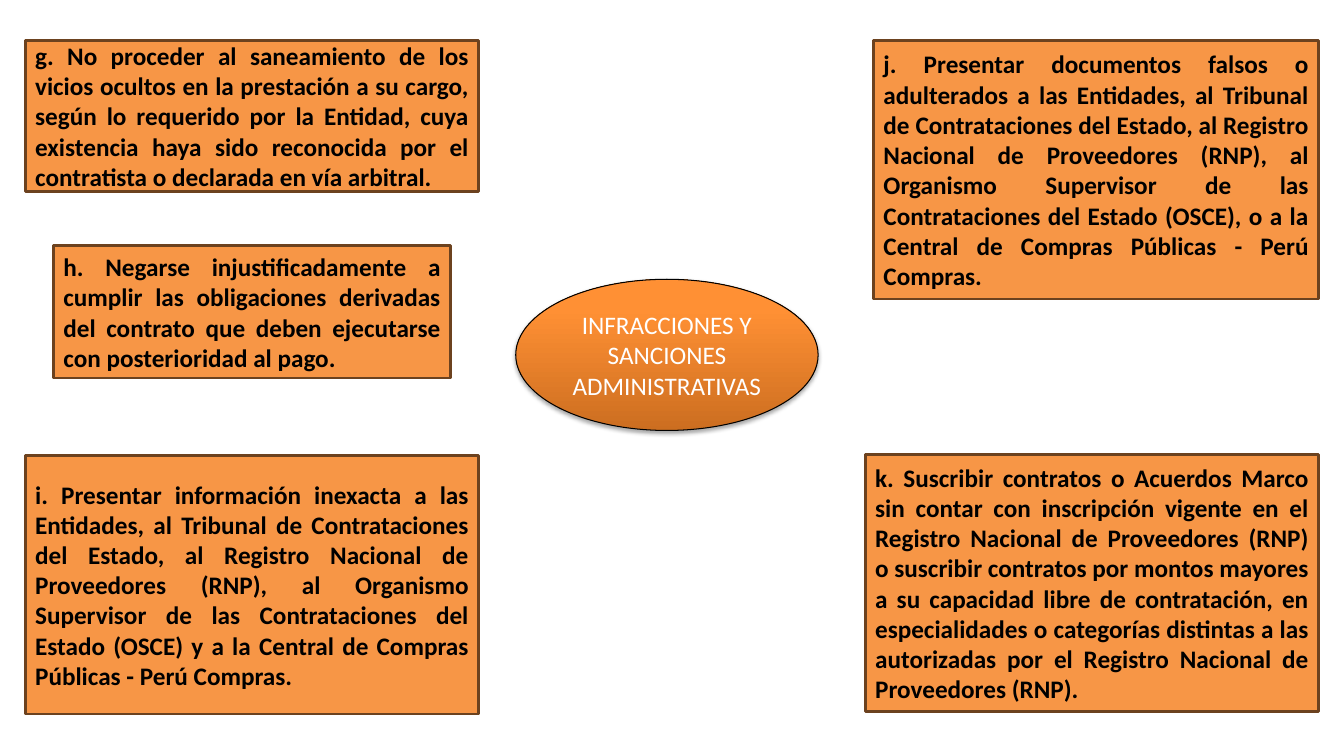
from copy import deepcopy

from lxml import etree
from pptx import Presentation
from pptx.dml.color import RGBColor
from pptx.enum.shapes import MSO_SHAPE
from pptx.enum.text import MSO_ANCHOR, PP_ALIGN
from pptx.oxml.ns import qn
from pptx.util import Inches, Pt

RECTANGLE, OVAL = MSO_SHAPE.RECTANGLE, MSO_SHAPE.OVAL
CENTER, JUSTIFY = PP_ALIGN.CENTER, PP_ALIGN.JUSTIFY
MIDDLE = MSO_ANCHOR.MIDDLE
COLUMNS, ROWS = 160, 90

COLORS = {
    "orange": "F79646", "brown": "6C421F", "black": "000000", "white": "FFFFFF",
    "dark": "CC6E20", "bright": "FF9034", "top": "FF9136",
}
GRADIENT = [(0, "dark"), (0.8, "bright"), (1, "top")]

INFRACTIONS = [
    ((3, 4.8, 54, 18),
     "g. No proceder al saneamiento de los vicios ocultos en la prestación a su cargo, "
     "según lo requerido por la Entidad, cuya existencia haya sido reconocida por el "
     "contratista o declarada en vía arbitral."),
    ((6.36, 29.25, 47.3, 15.75),
     "h. Negarse injustificadamente a cumplir las obligaciones derivadas del contrato "
     "que deben ejecutarse con posterioridad al pago."),
    ((3, 54.2, 54, 30.8),
     "i. Presentar información inexacta a las Entidades, al Tribunal de Contrataciones "
     "del Estado, al Registro Nacional de Proveedores (RNP), al Organismo Supervisor de "
     "las Contrataciones del Estado (OSCE) y a la Central de Compras Públicas - Perú "
     "Compras."),
    ((104, 4.8, 53, 30.8),
     "j. Presentar documentos falsos o adulterados a las Entidades, al Tribunal de "
     "Contrataciones del Estado, al Registro Nacional de Proveedores (RNP), al Organismo "
     "Supervisor de las Contrataciones del Estado (OSCE), o a la Central de Compras "
     "Públicas - Perú Compras."),
    ((103, 54.1, 54, 30.6),
     "k. Suscribir contratos o Acuerdos Marco sin contar con inscripción vigente en el "
     "Registro Nacional de Proveedores (RNP) o suscribir contratos por montos mayores a "
     "su capacidad libre de contratación, en especialidades o categorías distintas a las "
     "autorizadas por el Registro Nacional de Proveedores (RNP)."),
]


class InfractionMap:
    """Draws a central topic and its infraction boxes on a slide grid."""

    def __init__(self, presentation):
        self.font, self.size = "Calibri", Pt(18)
        self.column = presentation.slide_width / COLUMNS
        self.row = presentation.slide_height / ROWS
        self.slide = presentation.slides.add_slide(presentation.slide_layouts[6])

    def color(self, name):
        return RGBColor.from_string(COLORS[name])

    def shape(self, kind, place, text, align, text_color, line_color, line_width, bold):
        left, top, width, height = place
        shape = self.slide.shapes.add_shape(
            kind, round(left * self.column), round(top * self.row),
            round(width * self.column), round(height * self.row))
        shape.shadow.inherit = False
        shape.line.color.rgb = self.color(line_color)
        shape.line.width = Pt(line_width)
        frame = shape.text_frame
        frame.word_wrap = True
        frame.vertical_anchor = MIDDLE
        paragraph = frame.paragraphs[0]
        paragraph.text = text
        paragraph.alignment = align
        paragraph.font.name = self.font
        paragraph.font.size = self.size
        paragraph.font.bold = bold
        paragraph.font.color.rgb = self.color(text_color)
        return shape

    def box(self, place, text):
        shape = self.shape(RECTANGLE, place, text, JUSTIFY, "black", "brown", 2, True)
        shape.fill.solid()
        shape.fill.fore_color.rgb = self.color("orange")

    def topic(self, place, text):
        shape = self.shape(OVAL, place, text, CENTER, "white", "black", 0.75, False)
        shape.fill.gradient()
        shape.fill.gradient_angle = 90
        properties = shape.element.spPr
        stops = properties.find(qn("a:gradFill")).find(qn("a:gsLst"))
        stops.append(deepcopy(stops[-1]))
        for stop, (position, name) in zip(shape.fill.gradient_stops, GRADIENT):
            stop.position = position
            stop.color.rgb = self.color(name)
        self.drop_shadow(properties.find(qn("a:effectLst")))

    def drop_shadow(self, effects):
        shadow = etree.SubElement(
            effects, qn("a:outerShdw"), blurRad=str(Pt(3.1)), dist=str(Pt(1.8)),
            dir="5400000", rotWithShape="0")
        tint = etree.SubElement(shadow, qn("a:srgbClr"), val=COLORS["black"])
        etree.SubElement(tint, qn("a:alpha"), val="35000")


def main():
    presentation = Presentation()
    presentation.slide_width = Inches(13.33)
    presentation.slide_height = Inches(7.5)
    infraction_map = InfractionMap(presentation)
    infraction_map.topic((61.4, 33.25, 36, 18), "INFRACCIONES Y SANCIONES ADMINISTRATIVAS")
    for place, text in INFRACTIONS:
        infraction_map.box(place, text)
    presentation.save("out.pptx")


if __name__ == "__main__":
    main()
